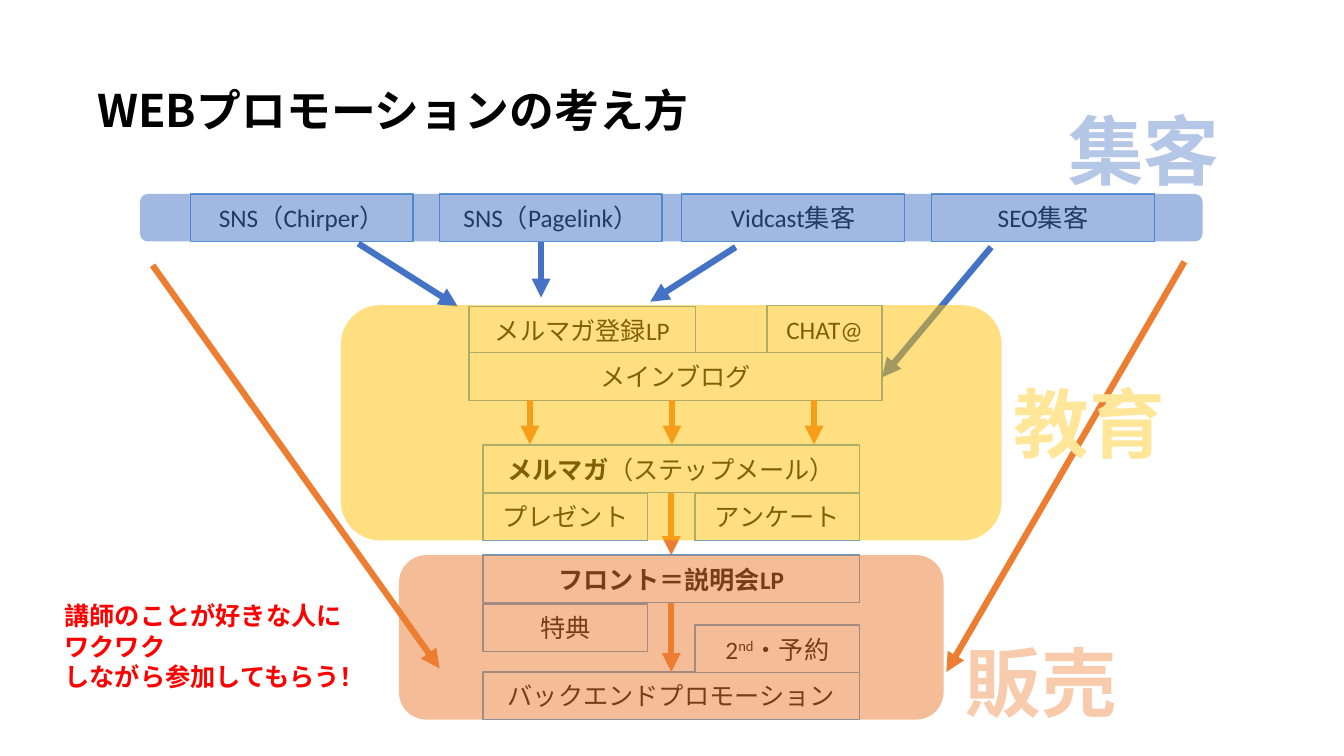
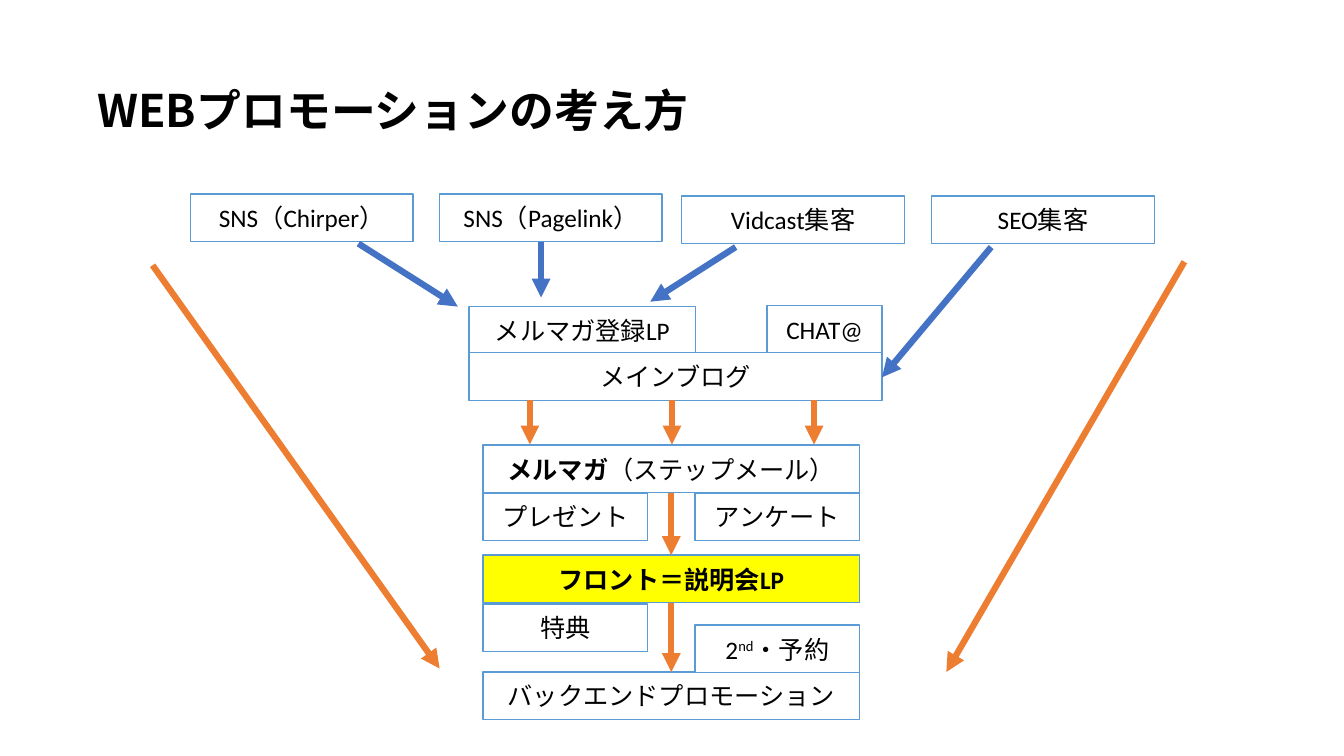
"""Build two slides on how a web promotion funnel works."""
from dataclasses import dataclass

from lxml.etree import SubElement as Sub
from pptx import Presentation
from pptx.dml.color import RGBColor as Rgb
from pptx.enum.shapes import MSO_CONNECTOR as Link, MSO_SHAPE as Form
from pptx.enum.text import MSO_ANCHOR as Anchor, MSO_AUTO_SIZE as Fit, PP_ALIGN as Align
from pptx.oxml.ns import qn
from pptx.util import Pt


@dataclass(frozen=True)
class Theme:
    """Colours, fonts and sizes of the deck."""
    ink: str = "000000"
    paper: str = "FFFFFF"
    edge: str = "5B9BD5"
    blue: str = "4472C4"
    gold: str = "FFC000"
    rust: str = "ED7D31"
    alert: str = "FF0000"
    mark: str = "FFFF00"
    latin: str = "Calibri"
    asian: str = "Noto Sans CJK JP"
    title: int = 32
    body: int = 18
    stage: int = 54
    inset: float = 3.6
    stroke: float = 4.5


T = Theme()
TITLE = "WEBプロモーションの考え方"
ROW = 34
LEFT, WIDE, SMALL = 345, 269, 117.5
RIGHT = LEFT + WIDE - SMALL
MID = 479.5

SOURCES = [
    (136, ["SNS", "（", "Chirper", "）"]),
    (314, ["SNS", "（", "Pagelink", "）"]),
    (487, ["Vidcast", "集客"]),
    (665.5, ["SEO", "集客"]),
]
STEPS = [
    (LEFT, 480, WIDE, ["バックエンドプロモーション"]),
    (LEFT, 318, WIDE, [("メルマガ", "b"), "（ステップメール）"]),
    (RIGHT, 352, SMALL, ["アンケート"]),
    (RIGHT, 446.5, SMALL, ["2", ("nd", "^"), "・予約"]),
    (335, 219, 162, ["メルマガ登録", "LP"]),
    (335, 252, 295, ["メインブログ"]),
    (548, 218, 82, ["CHAT@"]),
    (LEFT, 352, SMALL, ["プレゼント"]),
    (LEFT, 431.5, SMALL, ["特典"]),
]
FRONT = [("フロント＝説明会", "b"), ("LP", "b")]
ARROWS = {
    T.rust: [
        (109, 189.5, 314, 477.5), (846, 187, 676, 480),
        *[(x, 286, x, 317.5) for x in (378.5, 480, 581.5)],
        (MID, 352, MID, 396.5), (MID, 430.5, MID, 480),
    ],
    T.blue: [
        (256, 174, 327, 219), (386.5, 173, 386.5, 212.5),
        (525.5, 176.5, 464.5, 215.5), (708, 176.5, 630, 269.5),
    ],
}
BANDS = [
    (T.blue, (100, 138.5, 759, ROW)),
    (T.gold, (243.5, 218, 472, 168)),
    (T.rust, (285, 396.5, 389, 117.5)),
]
STAGES = [
    ("集客", 759, 70.5, "B4C7E7", T.blue),
    ("教育", 720, 265.5, "FFE699", T.gold),
    ("販売", 686, 450.5, "F8CBAD", T.rust),
]
NOTE = ["講師のことが好きな人に", "ワクワク", "しながら参加してもらう！"]


def hue(code):
    """Turn a hex code into a colour."""
    return Rgb.from_string(code)


def pts(*nums):
    """Turn numbers into point lengths."""
    return [Pt(n) for n in nums]


def add_run(para, text, size, color, flags=""):
    """Add one run, with b for bold and ^ for raised text."""
    run = para.add_run()
    run.text = text
    font = run.font
    font.size, font.bold = Pt(size), "b" in flags
    font.color.rgb = hue(color)
    font.name = T.latin if text.isascii() else T.asian
    props = run._r.get_or_add_rPr()
    Sub(props, qn("a:ea"), typeface=T.asian)
    if "^" in flags:
        props.set("baseline", "30000")
    return props


def set_frame(frame, anchor, wrap=True):
    """Set the margins, anchor and wrap of a text frame."""
    frame.margin_left = frame.margin_right = Pt(T.inset)
    frame.margin_top = frame.margin_bottom = Pt(T.inset)
    frame.vertical_anchor, frame.word_wrap = anchor, wrap
    frame.auto_size = Fit.NONE


def add_title(page):
    """Place and fill the title."""
    head = page.shapes.title
    head.left, head.top, head.width, head.height = pts(66, 29, 828, 104)
    set_frame(head.text_frame, Anchor.MIDDLE)
    para = head.text_frame.paragraphs[0]
    para.alignment, para.line_spacing = Align.LEFT, 0.9
    add_run(para, TITLE, T.title, T.ink, "b")


def add_box(page, x, y, width, runs, fill=T.paper):
    """Add one outlined step with centred text."""
    box = page.shapes.add_shape(Form.RECTANGLE, *pts(x, y, width, ROW))
    box.shadow.inherit = False
    box.fill.solid()
    box.fill.fore_color.rgb = hue(fill)
    box.line.color.rgb, box.line.width = hue(T.edge), Pt(1)
    set_frame(box.text_frame, Anchor.MIDDLE)
    para = box.text_frame.paragraphs[0]
    para.alignment = Align.CENTER
    for run in runs:
        text, flags = (run, "") if isinstance(run, str) else run
        add_run(para, text, T.body, T.ink, flags)


def add_arrow(page, ends, color):
    """Add a thick arrow."""
    line = page.shapes.add_connector(Link.STRAIGHT, *pts(*ends))
    line.line.color.rgb, line.line.width = hue(color), Pt(T.stroke)
    Sub(line.line._get_or_add_ln(), qn("a:tailEnd"), type="triangle")
    Sub(line._element.spPr, qn("a:effectLst"))


def add_band(page, color, area):
    """Add a half-clear rounded band."""
    band = page.shapes.add_shape(Form.ROUNDED_RECTANGLE, *pts(*area))
    band.shadow.inherit = False
    band.fill.solid()
    band.fill.fore_color.rgb = hue(color)
    band.line.fill.background()
    tint = band._element.spPr.find(qn("a:solidFill"))[0]
    Sub(tint, qn("a:alpha"), val="50000")


def add_stage(page, text, x, y, color, edge):
    """Add a large outlined stage name."""
    frame = page.shapes.add_textbox(*pts(x, y, 116, 61)).text_frame
    set_frame(frame, Anchor.TOP, wrap=False)
    para = frame.paragraphs[0]
    para.alignment = Align.CENTER
    props = add_run(para, text, T.stage, color, "b")
    line = Sub(props, qn("a:ln"), w=str(Pt(1.75)))
    Sub(Sub(line, qn("a:solidFill")), qn("a:srgbClr"), val=edge)
    props.insert(0, line)


def add_note(page):
    """Add the red remark."""
    frame = page.shapes.add_textbox(*pts(42.5, 425.5, 271.5, 79)).text_frame
    set_frame(frame, Anchor.TOP)
    for i, text in enumerate(NOTE):
        para = frame.add_paragraph() if i else frame.paragraphs[0]
        add_run(para, text, T.body, T.alert, "b")


def add_flow(deck, fill=T.paper, drop=0):
    """Add a slide with the funnel; drop lowers the two right sources."""
    page = deck.slides.add_slide(deck.slide_layouts[5])
    add_title(page)
    add_box(page, LEFT, 396.5, WIDE, FRONT, fill)
    for step in STEPS:
        add_box(page, *step)
    for i, (x, runs) in enumerate(SOURCES):
        add_box(page, x, 138.5 + drop * (i > 1), 159, runs)
    for color, arrows in ARROWS.items():
        for ends in arrows:
            add_arrow(page, ends, color)
    return page


def main():
    """Build and save the deck."""
    deck = Presentation()
    deck.slide_width, deck.slide_height = pts(960, 540)
    page = add_flow(deck)
    add_note(page)
    for band in BANDS:
        add_band(page, *band)
    for stage in STAGES:
        add_stage(page, *stage)
    add_flow(deck, T.mark, 1.5)
    deck.save("out.pptx")


if __name__ == "__main__":
    main()
